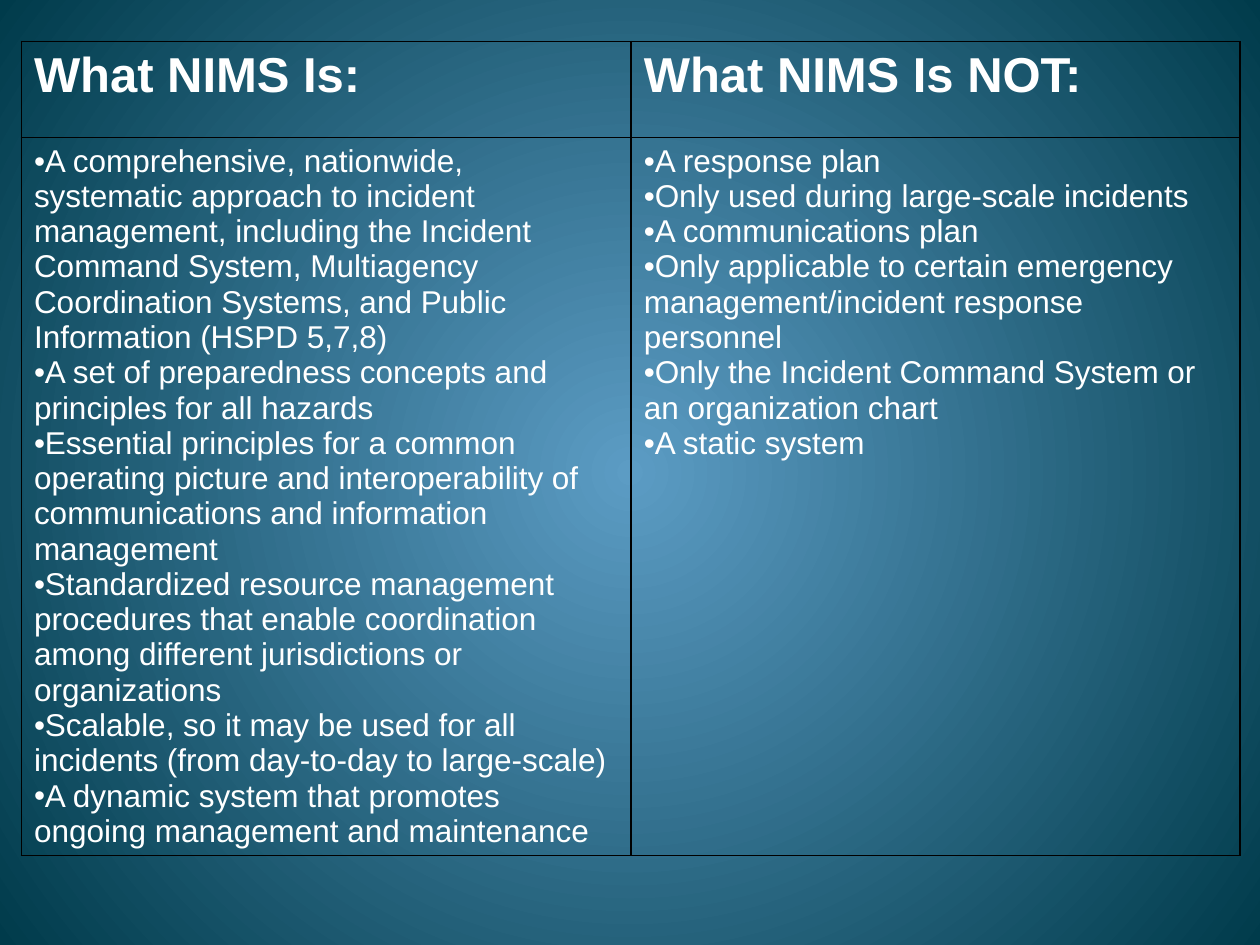
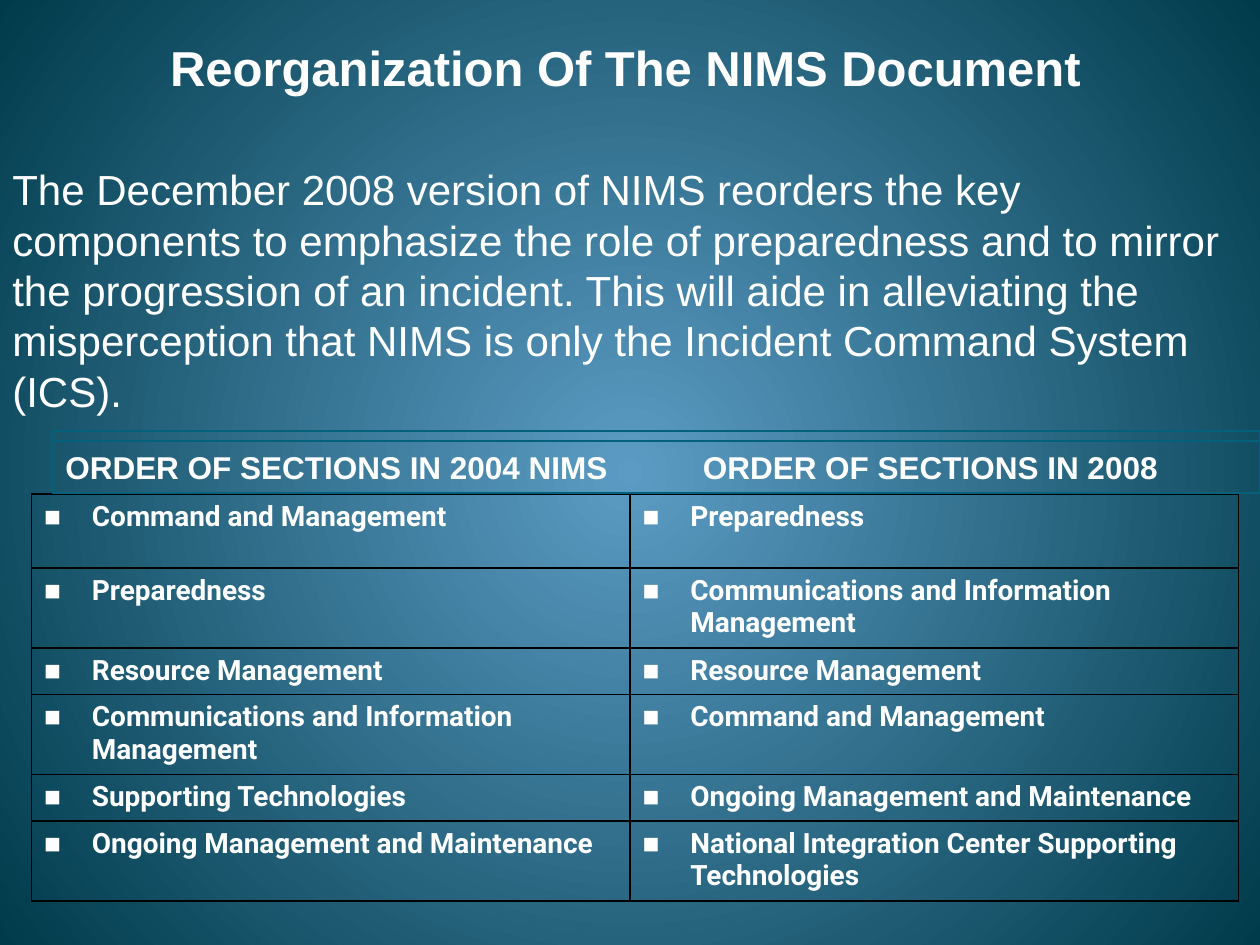
from dataclasses import dataclass

from lxml import etree
from pptx import Presentation
from pptx.dml.color import RGBColor
from pptx.enum.shapes import MSO_SHAPE
from pptx.enum.text import MSO_ANCHOR, MSO_AUTO_SIZE, PP_ALIGN
from pptx.oxml.ns import qn
from pptx.util import Inches, Pt

RECTANGLE = MSO_SHAPE.RECTANGLE
TOP, MIDDLE = MSO_ANCHOR.TOP, MSO_ANCHOR.MIDDLE
LEFT = PP_ALIGN.LEFT
NO_AUTOFIT = MSO_AUTO_SIZE.NONE

COLORS = {
    "glow": "5C9CC4",
    "edge": "003B4B",
    "text": "FFFFFF",
    "grid": "000000",
    "band": "04617B",
}
HEADING = {"size": 28, "bold": True}
BULLETED = {"size": 18, "bullet": "•"}
SECTION = {"size": 16, "bold": True, "font": "Roboto", "bullet": "■", "hanging": 0.38}

NIMS_IS = [
    "A comprehensive, nationwide, systematic approach to incident management, "
    "including the Incident Command System, Multiagency Coordination Systems, "
    "and Public Information (HSPD 5,7,8)",
    "A set of preparedness concepts and principles for all hazards",
    "Essential principles for a common operating picture and interoperability of "
    "communications and information management",
    "Standardized resource management procedures that enable coordination among "
    "different jurisdictions or organizations",
    "Scalable, so it may be used for all incidents (from day-to-day to large-scale)",
    "A dynamic system that promotes ongoing management and maintenance",
]
NIMS_IS_NOT = [
    "A response plan",
    "Only used during large-scale incidents",
    "A communications plan",
    "Only applicable to certain emergency management/incident response personnel",
    "Only the Incident Command System or an organization chart",
    "A static system",
]
SECTIONS_2004 = [
    "Command and Management",
    "Preparedness",
    "Resource Management",
    "Communications and Information Management",
    "Supporting Technologies",
    "Ongoing Management and Maintenance",
]
SECTIONS_2008 = [
    "Preparedness",
    "Communications and Information Management",
    "Resource Management",
    "Command and Management",
    "Ongoing Management and Maintenance",
    "National Integration Center Supporting Technologies",
]
REORDERING = (
    "The December 2008 version of NIMS reorders the key components to emphasize "
    "the role of preparedness and to mirror the progression of an incident. This "
    "will aide in alleviating the misperception that NIMS is only the Incident "
    "Command System (ICS)."
)


@dataclass
class Row:
    height: float
    cells: list[list[str]]
    style: dict


@dataclass
class Grid:
    left: float
    top: float
    columns: list[float]
    rows: list[Row]


@dataclass
class Band:
    top: float
    height: float
    text: str = ""


def color(name: str) -> RGBColor:
    return RGBColor.from_string(COLORS[name])


def write(frame, *texts: str, size: float, bold: bool = False, font: str = "Arial",
          bullet: str = "", hanging: float = 0, tab: float = 0,
          anchor=TOP, wrap: bool = True) -> None:
    frame.word_wrap = wrap
    frame.vertical_anchor = anchor
    for index, text in enumerate(texts):
        paragraph = frame.add_paragraph() if index else frame.paragraphs[0]
        paragraph.alignment = LEFT
        run = paragraph.add_run()
        run.text = text
        run.font.size = Pt(size)
        run.font.bold = bold
        run.font.name = font
        run.font.color.rgb = color("text")
        properties = paragraph._p.get_or_add_pPr()
        if bullet:
            properties.set("marL", str(Inches(hanging)))
            properties.set("indent", str(-Inches(hanging)))
            etree.SubElement(properties, qn("a:buFont"), typeface="Arial")
            etree.SubElement(properties, qn("a:buChar"), char=bullet)
        if tab:
            stops = etree.SubElement(properties, qn("a:tabLst"))
            etree.SubElement(stops, qn("a:tab"), pos=str(Inches(tab)), algn="l")


def paint_background(master) -> None:
    fill = master.background.fill
    fill.gradient()
    for stop, name in zip(fill.gradient_stops, ("glow", "edge")):
        stop.color.rgb = color(name)
    gradient = master.element.find(".//" + qn("a:gradFill"))
    gradient.remove(gradient.find(qn("a:lin")))
    circle = etree.SubElement(gradient, qn("a:path"), path="circle")
    center = {side: "50000" for side in "ltrb"}
    etree.SubElement(circle, qn("a:fillToRect"), center)


def outline_cell(cell) -> None:
    properties = cell._tc.get_or_add_tcPr()
    for index, side in enumerate(("lnL", "lnR", "lnT", "lnB")):
        border = etree.Element(qn(f"a:{side}"), w=str(Pt(1)))
        solid = etree.SubElement(border, qn("a:solidFill"))
        etree.SubElement(solid, qn("a:srgbClr"), val=COLORS["grid"])
        properties.insert(index, border)


def draw_grid(slide, grid: Grid) -> None:
    table = slide.shapes.add_table(
        len(grid.rows), len(grid.columns), Inches(grid.left), Inches(grid.top),
        Inches(sum(grid.columns)), Inches(sum(row.height for row in grid.rows)),
    ).table
    table.first_row = table.horz_banding = False
    for column, width in zip(table.columns, grid.columns):
        column.width = Inches(width)
    for index, row in enumerate(grid.rows):
        table.rows[index].height = Inches(row.height)
        for cell, texts in zip(table.rows[index].cells, row.cells):
            write(cell.text_frame, *texts, **row.style)
            cell.vertical_anchor = TOP
            cell.fill.background()
            outline_cell(cell)


def draw_band(group, band: Band) -> None:
    shape = group.shapes.add_shape(
        RECTANGLE, Inches(0.42), Inches(band.top), Inches(9.58), Inches(band.height))
    shape.shadow.inherit = False
    shape.fill.background()
    shape.line.color.rgb = color("band")
    shape.line.width = Pt(0.75)
    if band.text:
        write(shape.text_frame, band.text, size=18, bold=True, tab=5.06, anchor=MIDDLE)


def build_comparison(deck) -> None:
    slide = deck.slides.add_slide(deck.slide_layouts[6])
    draw_grid(slide, Grid(0.17, 0.33, [4.84, 4.83], [
        Row(0.76, [["What NIMS Is:"], ["What NIMS Is NOT:"]], HEADING),
        Row(5.69, [NIMS_IS, NIMS_IS_NOT], BULLETED),
    ]))


def build_reorganization(deck) -> None:
    slide = deck.slides.add_slide(deck.slide_layouts[5])
    title = slide.shapes.title
    title.left, title.top = Inches(1.25), Inches(0.25)
    title.width, title.height = Inches(7.55), Inches(0.57)
    write(title.text_frame, "Reorganization Of The NIMS Document", wrap=False, **HEADING)
    title.text_frame.auto_size = NO_AUTOFIT

    summary = slide.shapes.add_textbox(0, Inches(1.25), Inches(10), Inches(2.1))
    write(summary.text_frame, REORDERING, size=24)

    heights = [0.59, 0.63, 0.37, 0.63, 0.37, 0.63]
    draw_grid(slide, Grid(0.25, 3.92, [4.75, 4.83], [
        Row(height, [[before], [after]], SECTION)
        for height, before, after in zip(heights, SECTIONS_2004, SECTIONS_2008)
    ]))

    bands = slide.shapes.add_group_shape()
    draw_band(bands, Band(3.5, 0.41,
                          "ORDER OF SECTIONS IN 2004 NIMS\tORDER OF SECTIONS IN 2008"))
    draw_band(bands, Band(3.42, 0.5))


def main() -> None:
    deck = Presentation()
    deck.slide_width, deck.slide_height = Inches(10), Inches(7.5)
    paint_background(deck.slide_master)
    build_comparison(deck)
    build_reorganization(deck)
    deck.save("out.pptx")


if __name__ == "__main__":
    main()
